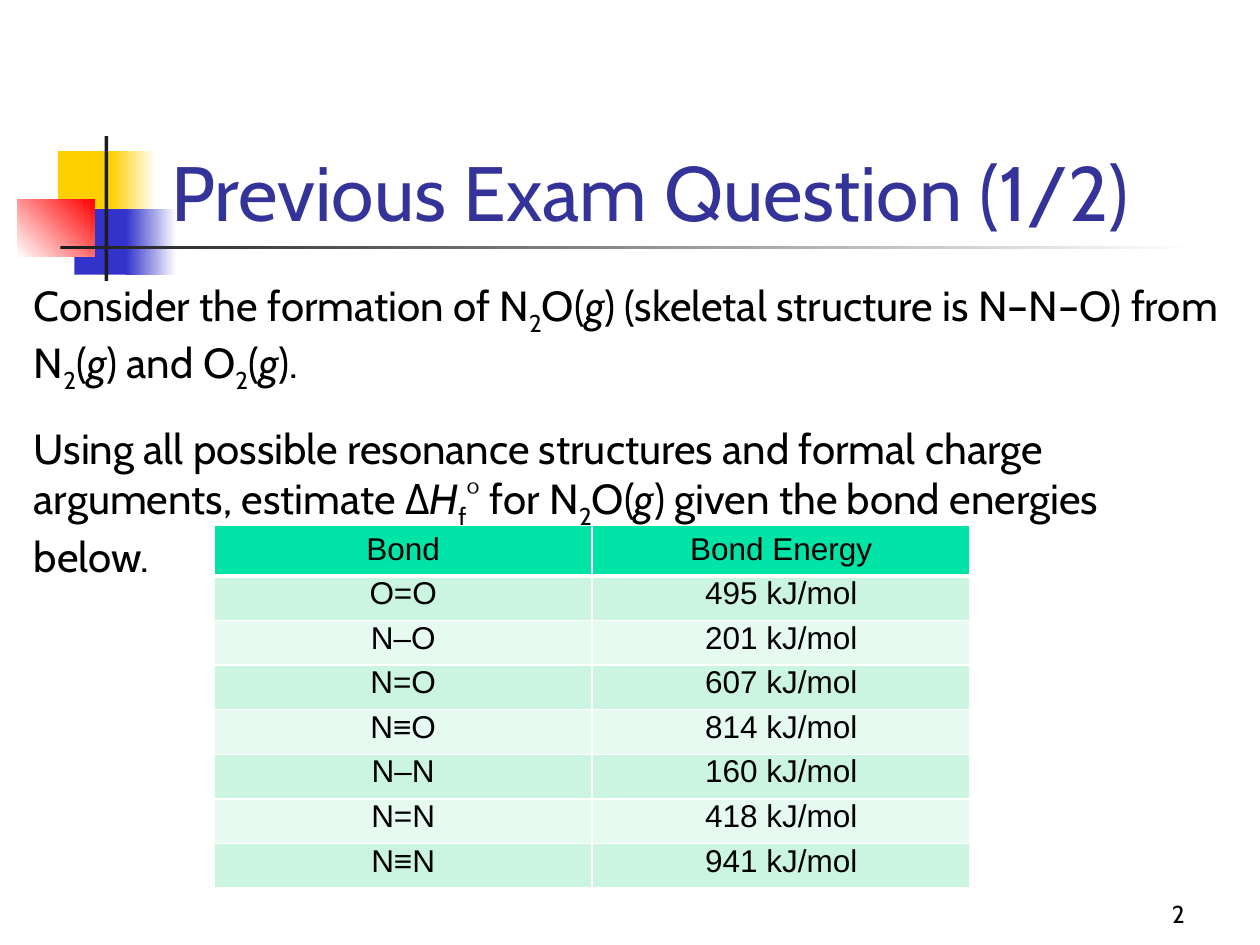
from pptx import Presentation
from pptx.dml.color import RGBColor
from pptx.enum.shapes import MSO_SHAPE as Shape
from pptx.enum.text import MSO_ANCHOR as Anchor, PP_ALIGN as Align
from pptx.oxml.ns import qn
from pptx.util import Inches, Pt
from lxml.etree import SubElement

WHITE, BLACK, CHARCOAL = "FFFFFF", "000000", "1C1C1C"
YELLOW, BLUE, RED = "FFCF01", "3333CC", "FF0000"
TITLE_BLUE = "333399"
HEADER_GREEN, BAND_GREEN, PALE_GREEN = "00E4A8", "CCF5E1", "E7FAF1"

MOTIF_BLOCKS = [
    (0.32, 0.12, 0.48, 0.52, (YELLOW,), 0),
    (0.74, 0.12, 0.36, 0.52, (YELLOW, WHITE), 0),
    (0.45, 0.58, 0.46, 0.52, (BLUE,), 0),
    (0.86, 0.58, 0.4, 0.52, (BLUE, WHITE), 0),
    (0, 0.5, 0.61, 0.46, (WHITE, RED), 45),
    (0.69, 0, 0.03, 1.15, (CHARCOAL,), 0),
    (0.34, 0.87, 9, 0.03, (CHARCOAL, WHITE), 0),
]

# In each paragraph, "_" marks a subscript and "/" marks italics.
QUESTION = [
    ["Consider the formation of N", "_2", "O(", "/g",
     ") (skeletal structure is N–N–O) from N", "_2", "(", "/g",
     ") and O", "_2", "(", "/g", ")."],
    ["Using all possible resonance structures and formal charge arguments, estimate Δ",
     "/H", "_f", "° for N", "_2", "O(", "/g",
     ") given the bond energies below."],
]

BOND_ENERGIES = [
    ("Bond", "Bond Energy"),
    ("O=O", "495 kJ/mol"),
    ("N–O", "201 kJ/mol"),
    ("N=O", "607 kJ/mol"),
    ("N≡O", "814 kJ/mol"),
    ("N–N", "160 kJ/mol"),
    ("N=N", "418 kJ/mol"),
    ("N≡N", "941 kJ/mol"),
]


def color(hex_string):
    """Return the colour for a hex string."""
    return RGBColor.from_string(hex_string)


def style_run(run, size, font_name="Cabin", hex_string=BLACK):
    """Set the size, typeface and colour of a run."""
    run.font.size = Pt(size)
    run.font.name = font_name
    run.font.color.rgb = color(hex_string)


def add_text_frame(slide, left, top, width, height, anchor):
    """Add a wrapping text box and return its text frame."""
    box = slide.shapes.add_textbox(
        Inches(left), Inches(top), Inches(width), Inches(height))
    text_frame = box.text_frame
    text_frame.word_wrap = True
    text_frame.vertical_anchor = anchor
    return text_frame


def add_motif(slide, left, top):
    """Draw the coloured blocks and crossing bars beside the title."""
    for x, y, width, height, colors, angle in MOTIF_BLOCKS:
        block = slide.shapes.add_shape(
            Shape.RECTANGLE, Inches(left + x), Inches(top + y),
            Inches(width), Inches(height))
        block.shadow.inherit = False
        block.line.fill.background()
        if len(colors) == 1:
            block.fill.solid()
            block.fill.fore_color.rgb = color(colors[0])
        else:
            block.fill.gradient()
            block.fill.gradient_angle = angle
            for stop, hex_string, position in zip(block.fill.gradient_stops, colors, (0, 1)):
                stop.color.rgb = color(hex_string)
                stop.position = position


def add_line_of_text(slide, left, top, width, height, text, size, hex_string, align):
    """Add one bottom-anchored line of text."""
    text_frame = add_text_frame(slide, left, top, width, height, Anchor.BOTTOM)
    text_frame.text = text
    paragraph = text_frame.paragraphs[0]
    paragraph.alignment = align
    style_run(paragraph.runs[0], size, hex_string=hex_string)


def add_question(slide, left, top, width, height):
    """Write the question with its subscripts and italics."""
    text_frame = add_text_frame(slide, left, top, width, height, Anchor.TOP)
    for index, pieces in enumerate(QUESTION):
        paragraph = text_frame.add_paragraph() if index else text_frame.paragraphs[0]
        paragraph.space_before = Pt(16 if index else 0)
        for piece in pieces:
            run = paragraph.add_run()
            run.text = piece.lstrip("_/")
            style_run(run, 24)
            if piece.startswith("/"):
                run.font.italic = True
            elif piece.startswith("_"):
                run.font._element.set("baseline", "-25000")


def set_borders(cell, bottom_width):
    """Give a cell white borders, placed before its fill."""
    properties = cell._tc.get_or_add_tcPr()
    widths = {"a:lnL": 1, "a:lnR": 1, "a:lnT": 1, "a:lnB": bottom_width}
    for tag, width in widths.items():
        line = SubElement(properties, qn(tag), w=str(Pt(width)))
        SubElement(SubElement(line, qn("a:solidFill")), qn("a:srgbClr"), val=WHITE)


def add_energy_table(slide, left, top, width, height):
    """Add the banded table of bond energies."""
    row_count, column_count = len(BOND_ENERGIES), len(BOND_ENERGIES[0])
    header_height = 0.39
    row_height = (height - header_height) / (row_count - 1)
    table = slide.shapes.add_table(
        row_count, column_count, Inches(left), Inches(top),
        Inches(width), Inches(height)).table
    for row_index, values in enumerate(BOND_ENERGIES):
        is_header = row_index == 0
        table.rows[row_index].height = Inches(header_height if is_header else row_height)
        band = BAND_GREEN if row_index % 2 else PALE_GREEN
        side_margin, end_margin = (0.1, 0.05) if is_header else (0.07, 0)
        for column_index, value in enumerate(values):
            cell = table.cell(row_index, column_index)
            cell.margin_left = cell.margin_right = Inches(side_margin)
            cell.margin_top = cell.margin_bottom = Inches(end_margin)
            set_borders(cell, 3 if is_header else 1)
            cell.fill.solid()
            cell.fill.fore_color.rgb = color(HEADER_GREEN if is_header else band)
            cell.text_frame.text = value
            paragraph = cell.text_frame.paragraphs[0]
            paragraph.alignment = Align.CENTER
            style_run(paragraph.runs[0], 18, "Arial")
            paragraph.runs[0].font.bold = False


def main():
    """Build and save the slide."""
    presentation = Presentation()
    presentation.slide_width = Inches(10)
    presentation.slide_height = Inches(7.5)
    slide = presentation.slides.add_slide(presentation.slide_layouts[6])
    add_motif(slide, 0.14, 1.08)
    add_line_of_text(slide, 1.26, 0.68, 8.52, 1.25,
                     "Previous Exam Question (1/2)", 44, TITLE_BLUE, Align.LEFT)
    add_question(slide, 0.17, 2.17, 9.61, 5.25)
    add_line_of_text(slide, 7.42, 6.92, 2.08, 0.5, "2", 14, BLACK, Align.RIGHT)
    add_energy_table(slide, 1.7, 4.17, 6, 2.87)
    presentation.save("out.pptx")


if __name__ == "__main__":
    main()
